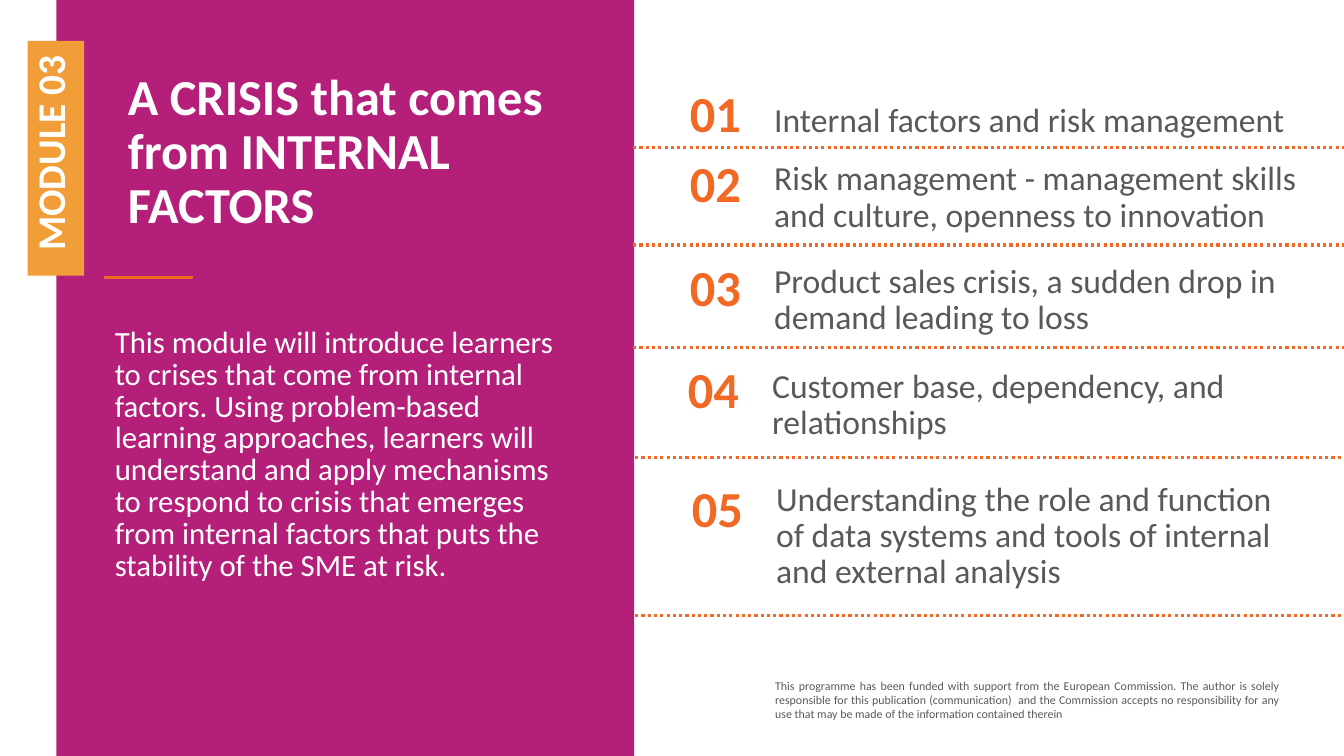
from lxml.etree import SubElement
from pptx import Presentation
from pptx.dml.color import RGBColor
from pptx.enum.dml import MSO_LINE
from pptx.enum.shapes import MSO_CONNECTOR, MSO_SHAPE
from pptx.enum.text import MSO_ANCHOR as ANCHOR, PP_ALIGN as ALIGN
from pptx.oxml.ns import qn
from pptx.util import Pt

PX = 9144  # 100 px to the inch
MAGENTA, ORANGE, AMBER = "B41F7A", "F16924", "F29E38"
WHITE, GREY = "FFFFFF", "595959"


def color(hex_string):
    return RGBColor.from_string(hex_string)


def write(shape, text, size, ink, bold=False, align=ALIGN.LEFT,
          anchor=ANCHOR.TOP, spacing=1.0):
    frame = shape.text_frame
    frame.word_wrap = True
    frame.vertical_anchor = anchor
    paragraph = frame.paragraphs[0]
    paragraph.alignment = align
    paragraph.line_spacing = spacing
    run = paragraph.add_run()
    run.text = text
    run.font.name = "Calibri"
    run.font.size = Pt(size)
    run.font.bold = bold
    run.font.color.rgb = color(ink)
    return paragraph


prs = Presentation()
prs.slide_width, prs.slide_height = 1333 * PX, 750 * PX
slide = prs.slides.add_slide(prs.slide_layouts[6])
shapes = slide.shapes

# Magenta panel, short rule and module tab
blocks = []
for left, top, width, height, fill in [
    (56, 0, 573, 750, MAGENTA),
    (104, 274, 87, 2, ORANGE),
    (-61, 129, 233, 56, AMBER),
]:
    block = shapes.add_shape(MSO_SHAPE.RECTANGLE, left * PX, top * PX,
                             width * PX, height * PX)
    block.shadow.inherit = False
    block.fill.solid()
    block.fill.fore_color.rgb = color(fill)
    block.line.fill.background()
    blocks.append(block)
panel, rule, module_tab = blocks

rule.line.color.rgb = color(ORANGE)
rule.line.width = Pt(1)

module_tab.rotation = 270
module_label = write(module_tab, "MODULE 03", 28, WHITE, bold=True,
                     anchor=ANCHOR.MIDDLE, spacing=Pt(24.4))
module_label._p.get_or_add_pPr().set("marL", str(15 * PX))

# Title and introduction
title = shapes.add_textbox(117 * PX, 66 * PX, 479 * PX, 221 * PX)
write(title, "A CRISIS that comes from INTERNAL FACTORS", 36, WHITE,
      bold=True, spacing=0.9)

introduction = shapes.add_textbox(104 * PX, 320 * PX, 471 * PX, 303 * PX)
write(introduction,
      "This module will introduce learners to crises that come from internal "
      "factors. Using problem-based learning approaches, learners will "
      "understand and apply mechanisms to respond to crisis that emerges from "
      "internal factors that puts the stability of the SME at risk.",
      22, WHITE, spacing=Pt(22.8))

# Topics: number left and top, topic left, top and width, divider left and y
topics = [
    ("Internal factors and risk management",
     664, 81, 758, 86, 575, 628, 146),
    ("Risk management - management skills and culture, openness to innovation",
     664, 150, 758, 162, 548, 628, 243),
    ("Product sales crisis, a sudden drop in demand leading to loss",
     664, 253, 758, 264, 520, 628, 345),
    ("Customer base, dependency, and relationships",
     662, 355, 756, 368, 521, 630, 454),
    ("Understanding the role and function of data systems and tools of "
     "internal and external analysis",
     666, 473, 760, 498, 520, 630, 611),
]
for index, (topic, number_left, number_top, topic_left, topic_top, topic_width,
            divider_left, divider_y) in enumerate(topics, start=1):
    number_box = shapes.add_textbox(number_left * PX, number_top * PX,
                                    91 * PX, 69 * PX)
    write(number_box, f"{index:02}", 36, ORANGE, bold=True,
          align=ALIGN.CENTER, anchor=ANCHOR.MIDDLE, spacing=0.9)

    topic_box = shapes.add_textbox(topic_left * PX, topic_top * PX,
                                   topic_width * PX, 69 * PX)
    write(topic_box, topic, 24, GREY, anchor=ANCHOR.MIDDLE, spacing=0.9)

    divider = shapes.add_connector(MSO_CONNECTOR.STRAIGHT, divider_left * PX,
                                   divider_y * PX, 1333 * PX, divider_y * PX)
    divider.line.color.rgb = color(ORANGE)
    divider.line.width = Pt(2.25)
    divider.line.dash_style = MSO_LINE.ROUND_DOT
    SubElement(divider._element.spPr, qn("a:effectLst"))

# Funding disclaimer
disclaimer = shapes.add_textbox(759 * PX, 668 * PX, 520 * PX, 53 * PX)
write(disclaimer,
      "This programme has been funded with support from the "
      "European Commission. The author is solely responsible for this "
      "publication (communication)  and the Commission accepts no "
      "responsibility for any use that may be made of the information "
      "contained therein",
      8.5, GREY, align=ALIGN.JUSTIFY)

prs.save("out.pptx")
